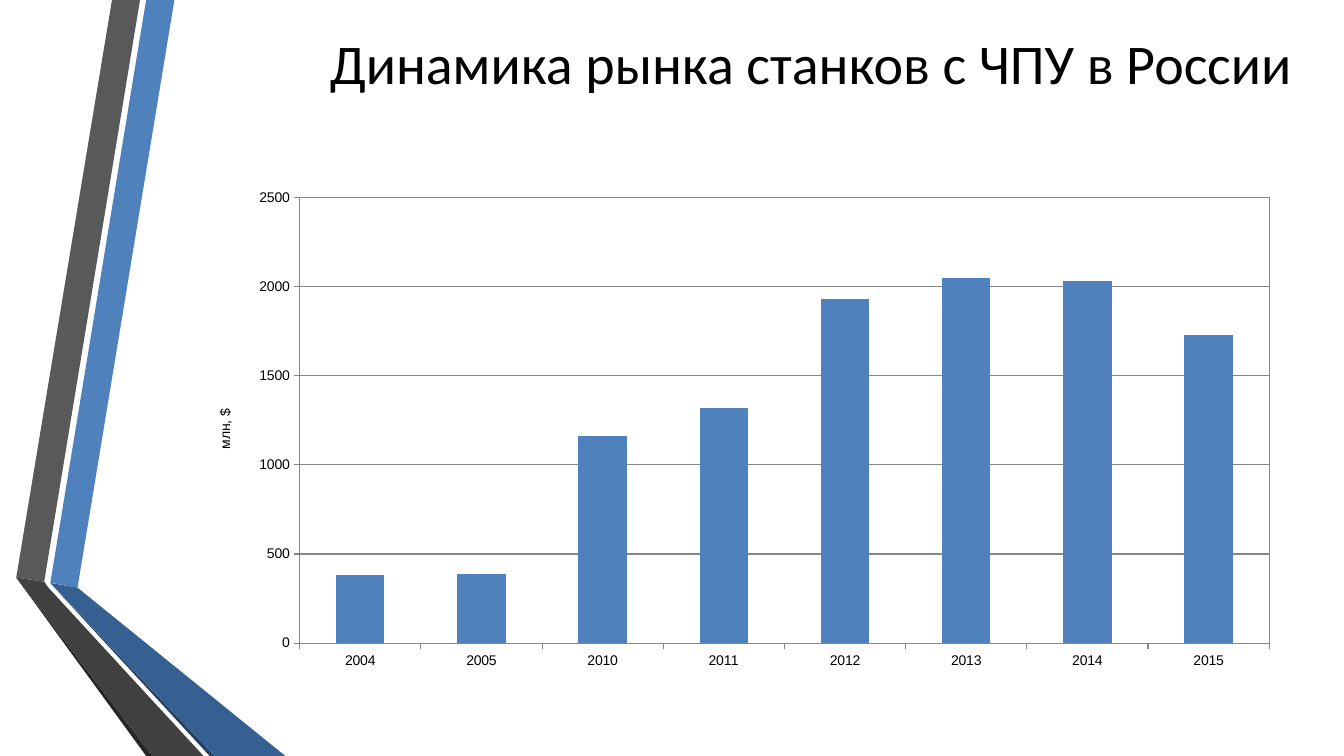
from dataclasses import dataclass

from lxml import etree
from pptx import Presentation
from pptx.chart.data import CategoryChartData
from pptx.dml.color import RGBColor
from pptx.enum import chart as ch, text
from pptx.oxml import parse_xml
from pptx.oxml.ns import nsdecls, qn
from pptx.util import Pt


@dataclass(frozen=True)
class Theme:
    ink: str = "000000"
    blue: str = "4F81BD"
    blue_dark: str = "376092"
    blue_shade: str = "254061"
    gray: str = "595959"
    gray_dark: str = "404040"
    gray_shade: str = "262626"
    grid: str = "878787"
    title_font: str = "Calibri"
    chart_font: str = "Arial"
    title_size: int = 40
    chart_size: int = 10
    grid_width: float = 0.75


THEME = Theme()
WIDTH, HEIGHT = 960, 540

RIBBONS = [
    (THEME.blue, [(36, 416.2), (55.4, 419.8), (124.6, 0), (104.4, 0)]),
    (THEME.gray, [(100, 0), (80, 0), (11.6, 412.6), (31.6, 415.5)]),
    (THEME.gray_shade, [(11.6, 412.6), (104.4, HEIGHT), (108.7, HEIGHT)]),
    (THEME.blue_shade, [(36, 416.6), (149.8, HEIGHT), (153.4, HEIGHT)]),
    (THEME.blue_dark, [(36, 416.4), (153.4, HEIGHT), (203.8, HEIGHT), (55.4, 419.8)]),
    (THEME.gray_dark, [(145.4, HEIGHT), (34.6, 419.8), (31.6, 415.5),
                       (11.6, 412.6), (108.7, HEIGHT)]),
]

MARKET = {"2004": 380, "2005": 390, "2010": 1160, "2011": 1320,
          "2012": 1930, "2013": 2050, "2014": 2030, "2015": 1730}


def color(value):
    return RGBColor.from_string(value)


def style_font(font, name, size):
    font.name = name
    font.size = Pt(size)
    font.bold = False
    font.color.rgb = color(THEME.ink)


def style_line(line):
    line.color.rgb = color(THEME.grid)
    line.width = Pt(THEME.grid_width)


def add_ribbon(s, fill, points):
    start, *rest = [(Pt(x), Pt(y)) for x, y in points]
    builder = s.shapes.build_freeform(*start)
    builder.add_line_segments(rest, close=True)
    sp = builder.convert_to_shape()
    sp.shadow.inherit = False
    sp.fill.solid()
    sp.fill.fore_color.rgb = color(fill)
    sp.line.fill.background()


def add_title(s, words, left, top, width, height):
    tf = s.shapes.add_textbox(Pt(left), Pt(top), Pt(width), Pt(height)).text_frame
    tf.word_wrap = True
    tf.vertical_anchor = text.MSO_ANCHOR.MIDDLE
    p = tf.paragraphs[0]
    p.text = words
    p.alignment = text.PP_ALIGN.RIGHT
    style_font(p.font, THEME.title_font, THEME.title_size)


def frame_plot(chart, x, y, w, h):
    area = chart._chartSpace.chart.plotArea
    for old in area.findall(qn("c:layout")):
        area.remove(old)
    layout = parse_xml(f"<c:layout {nsdecls('c')}><c:manualLayout/></c:layout>")
    settings = [("layoutTarget", "inner"), ("xMode", "edge"), ("yMode", "edge"),
                ("x", x), ("y", y), ("w", w), ("h", h)]
    for tag, value in settings:
        etree.SubElement(layout[0], qn(f"c:{tag}")).set("val", str(value))
    area.insert(0, layout)
    area.append(parse_xml(
        f'<c:spPr {nsdecls("c", "a")}><a:noFill/><a:ln w="{Pt(THEME.grid_width)}">'
        f'<a:solidFill><a:srgbClr val="{THEME.grid}"/></a:solidFill></a:ln></c:spPr>'))


def style_axis(axis):
    axis.major_tick_mark = ch.XL_TICK_MARK.OUTSIDE
    axis.minor_tick_mark = ch.XL_TICK_MARK.NONE
    style_font(axis.tick_labels.font, THEME.chart_font, THEME.chart_size)
    style_line(axis.format.line)


def add_column_chart(s, values, unit, left, top, width, height):
    data = CategoryChartData()
    data.categories = list(values)
    data.add_series("Рынок", list(values.values()))
    chart = s.shapes.add_chart(ch.XL_CHART_TYPE.COLUMN_CLUSTERED, Pt(left), Pt(top),
                               Pt(width), Pt(height), data).chart
    chart.has_legend = False
    chart.has_title = False
    style_font(chart.font, THEME.chart_font, THEME.chart_size)

    plot = chart.plots[0]
    plot.gap_width = 150
    plot.vary_by_categories = False
    fill = plot.series[0].format.fill
    fill.solid()
    fill.fore_color.rgb = color(THEME.blue)

    style_axis(chart.category_axis)
    axis = chart.value_axis
    style_axis(axis)
    axis.minimum_scale, axis.maximum_scale, axis.major_unit = 0, 2500, 500
    axis.has_major_gridlines = True
    style_line(axis.major_gridlines.format.line)
    p = axis.axis_title.text_frame.paragraphs[0]
    p.text = unit
    style_font(p.font, THEME.chart_font, THEME.chart_size)
    frame_plot(chart, 0.095, 0.036, 0.885, 0.892)


def main():
    prs = Presentation()
    prs.slide_width, prs.slide_height = Pt(WIDTH), Pt(HEIGHT)
    s = prs.slides.add_slide(prs.slide_layouts[6])
    for fill, points in RIBBONS:
        add_ribbon(s, fill, points)
    add_title(s, "Динамика рынка станков с ЧПУ в России", 116.6, 19.4, 813, 50.4)
    add_column_chart(s, MARKET, "млн, $", 139.7, 128.2, 782.6, 357)
    prs.save("out.pptx")


if __name__ == "__main__":
    main()
